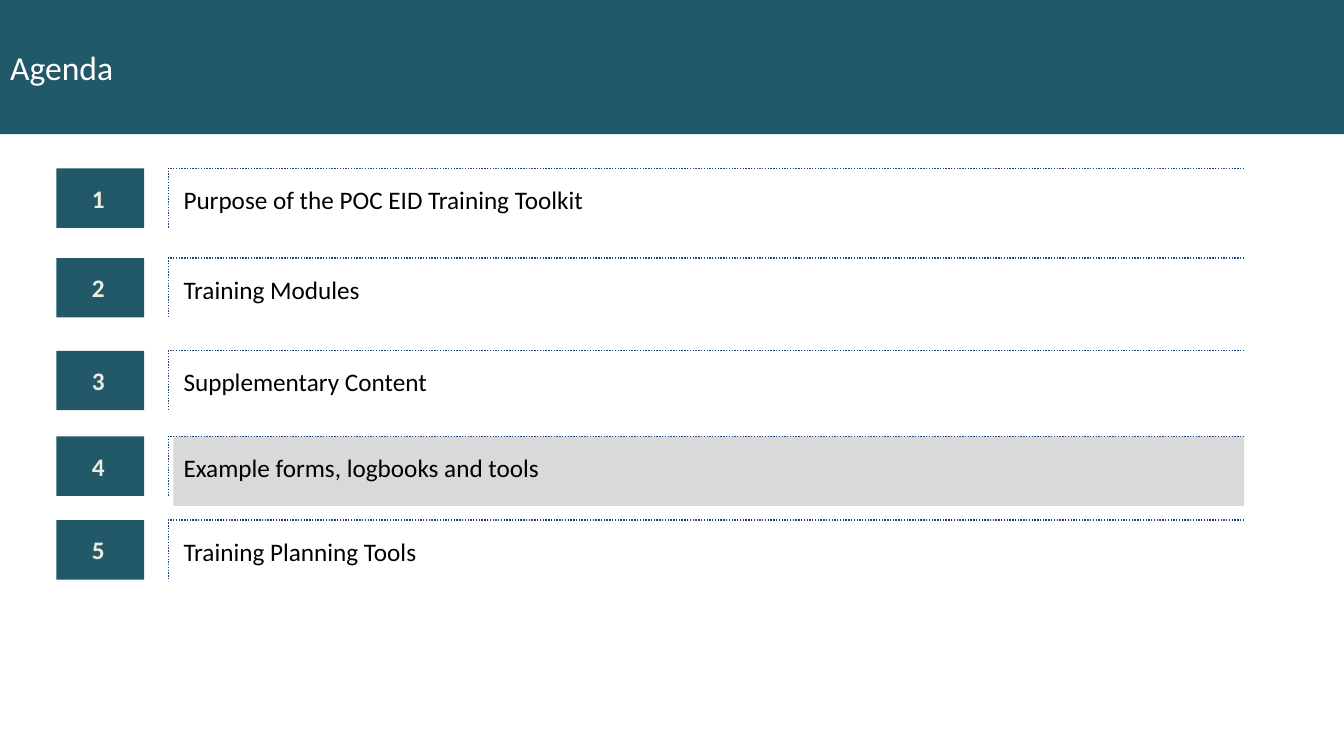
import pptx
import pptx.util
import pptx.dml.color
import pptx.enum.dml
import pptx.enum.shapes
import pptx.enum.text

Inches = pptx.util.Inches
ALIGN = pptx.enum.text.PP_ALIGN
ANCHOR = pptx.enum.text.MSO_ANCHOR
RECTANGLE = pptx.enum.shapes.MSO_SHAPE.RECTANGLE

COLORS = {
    "teal": "215968",
    "highlight": "D9D9D9",
    "rule": "1F497D",
    "title": "FFFFFF",
    "number": "EEECE1",
    "topic": "000000",
}

# Top edge of each row, in inches, and its topic
AGENDA = [
    (1.67, "Purpose of the POC EID Training Toolkit"),
    (2.56, "Training Modules"),
    (3.48, "Supplementary Content"),
    (4.33, "Example forms, logbooks and tools"),
    (5.16, "Training Planning Tools"),
]
CURRENT = 4
ROW_HEIGHT = 0.59
RULE_LEFT, RULE_RIGHT = 1.67, 12.34


def paint(fill, color):
    fill.solid()
    fill.fore_color.rgb = pptx.dml.color.RGBColor.from_string(COLORS[color])


def write(shape, text, size, color, align, bold=False, **frame_format):
    """Put one formatted paragraph in the shape; frame_format sets its text frame."""
    frame = shape.text_frame
    frame.word_wrap = True
    for name, value in frame_format.items():
        setattr(frame, name, value)
    paragraph = frame.paragraphs[0]
    paragraph.alignment = align
    run = paragraph.add_run()
    run.text = text
    for name, value in {"name": "Calibri", "size": pptx.util.Pt(size), "bold": bold}.items():
        setattr(run.font, name, value)
    paint(run.font.fill, color)
    return paragraph


deck = pptx.Presentation()
deck.slide_width, deck.slide_height = Inches(13.33), Inches(7.5)
slide = deck.slides.add_slide(deck.slide_layouts[5])

title = slide.shapes.title
title.left, title.top, title.width, title.height = 0, 0, deck.slide_width, Inches(1.33)
paint(title.fill, "teal")
write(title, "Agenda", 24, "title", ALIGN.LEFT, vertical_anchor=ANCHOR.MIDDLE)

highlight = slide.shapes.add_shape(
    RECTANGLE, Inches(1.72), Inches(AGENDA[CURRENT - 1][0]), Inches(10.62), Inches(0.69))
highlight.shadow.inherit = False
highlight.line.fill.background()
paint(highlight.fill, "highlight")

for number, (top, topic) in enumerate(AGENDA, start=1):
    row = slide.shapes.add_group_shape().shapes

    badge = row.add_shape(RECTANGLE, Inches(0.56), Inches(top), Inches(0.87), Inches(ROW_HEIGHT))
    badge.shadow.inherit = False
    badge.line.fill.background()
    paint(badge.fill, "teal")
    write(badge, str(number), 18, "number", ALIGN.CENTER, bold=True,
          vertical_anchor=ANCHOR.MIDDLE, margin_left=Inches(0.06))

    label = row.add_textbox(Inches(1.82), Inches(top + 0.18), Inches(9.91), Inches(0.29))
    paragraph = write(label, topic, 18, "topic", ALIGN.LEFT,
                      margin_left=0, margin_top=0, margin_right=0, margin_bottom=0)
    paragraph.line_spacing = 0.95

    outline = row.build_freeform(Inches(RULE_RIGHT), Inches(top))
    outline.add_line_segments(
        [(Inches(RULE_LEFT), Inches(top)), (Inches(RULE_LEFT), Inches(top + ROW_HEIGHT))],
        close=False)
    rule = outline.convert_to_shape()
    rule.shadow.inherit = False
    rule.fill.background()
    paint(rule.line.fill, "rule")
    rule.line.width = pptx.util.Pt(1)
    rule.line.dash_style = pptx.enum.dml.MSO_LINE.ROUND_DOT

deck.save("out.pptx")
